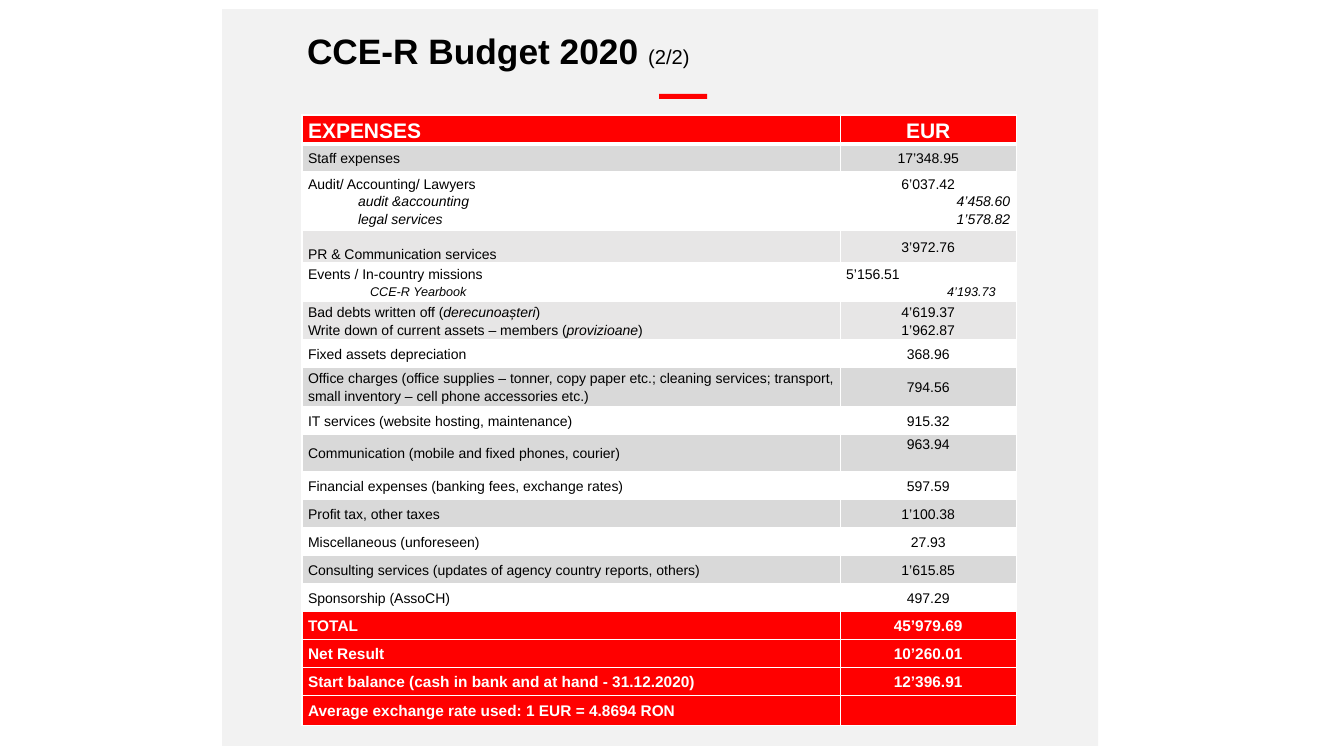
import pptx
import pptx.util
import pptx.dml.color
import pptx.enum.shapes
import pptx.enum.text
import lxml.etree

ALIGN = pptx.enum.text.PP_ALIGN
ANCHOR = pptx.enum.text.MSO_ANCHOR
RED, WHITE, BLACK = "FF0000", "FFFFFF", "000000"
GRAY, PALE = "D9D9D9", "E7E6E6"


def px(n):
    return pptx.util.Emu(round(n * 914400 / 100.8))


def add_text(p, text, size=10, color=BLACK, bold=False, align=ALIGN.LEFT, spacing=1.15, indent=0):
    p.alignment = align
    p.line_spacing = spacing
    if indent:
        p._p.get_or_add_pPr().set("marL", str(px(indent)))
    for i, part in enumerate(text.split("*")):
        if part or not text:
            r = p.add_run()
            r.text = part
            r.font.name = "Arial"
            r.font.size = pptx.util.Pt(size)
            r.font.bold = bold
            r.font.italic = i % 2 == 1
            r.font.color.rgb = pptx.dml.color.RGBColor.from_string(color)


prs = pptx.Presentation()
prs.slide_width = pptx.util.Inches(13.33)
prs.slide_height = pptx.util.Inches(7.5)
s = prs.slides.add_slide(prs.slide_layouts[6])

for box, color in [((222, 9, 876, 737), "F2F2F2"), ((659, 94, 48, 5), RED)]:
    sp = s.shapes.add_shape(pptx.enum.shapes.MSO_SHAPE.RECTANGLE, *map(px, box))
    sp.shadow.inherit = False
    sp.fill.solid()
    sp.fill.fore_color.rgb = pptx.dml.color.RGBColor.from_string(color)
    sp.line.fill.background()

tf = s.shapes.add_textbox(px(297), px(30), px(680), px(46)).text_frame
tf.word_wrap = True
tf.vertical_anchor = ANCHOR.MIDDLE
add_text(tf.paragraphs[0], "CCE-R Budget 2020 ", size=25.2, bold=True, spacing=0.9)
add_text(tf.paragraphs[0], "(2/2)", size=14.4, spacing=0.9)

sub = {"indent": 50}
right = {"align": ALIGN.RIGHT}
rows = [
    (28, RED, ["EXPENSES"], ["EUR"]),
    (28, GRAY, ["Staff expenses"], ["17’348.95"]),
    (57, WHITE, ["Audit/ Accounting/ Lawyers", ("*audit &accounting*", sub), ("*legal services*", sub)],
     ["6’037.42", ("*4’458.60*", right), ("*1’578.82*", right)]),
    (33, PALE, ["PR & Communication services"], ["3’972.76"]),
    (38, WHITE, ["Events / In-country missions", ("*CCE-R Yearbook*", {"indent": 62, "size": 9})],
     [("5’156.51", {"align": ALIGN.LEFT}), ("*4’193.73*", {"align": ALIGN.LEFT, "indent": 101, "size": 9})]),
    (36, PALE, ["Bad debts written off (*derecunoașteri*)",
                "Write down of current assets – members (*provizioane*)"], ["4’619.37", "1’962.87"]),
    (28, WHITE, ["Fixed assets depreciation"], ["368.96"]),
    (36, GRAY, ["Office charges (office supplies – tonner, copy paper etc.; cleaning services; transport, "
                "small inventory – cell phone accessories etc.)"], ["794.56"]),
    (28, WHITE, ["IT services (website hosting, maintenance)"], ["915.32"]),
    (37, GRAY, ["Communication (mobile and fixed phones, courier)"], ["963.94"]),
    (28, WHITE, ["Financial expenses (banking fees, exchange rates)"], ["597.59"]),
    (28, GRAY, ["Profit tax, other taxes"], ["1’100.38"]),
    (28, WHITE, ["Miscellaneous (unforeseen)"], ["27.93"]),
    (28, GRAY, ["Consulting services (updates of agency country reports, others)"], ["1’615.85"]),
    (28, WHITE, ["Sponsorship (AssoCH)"], ["497.29"]),
    (28, RED, ["TOTAL"], ["45’979.69"]),
    (28, RED, ["Net Result"], ["10’260.01"]),
    (28, RED, ["Start balance (cash in bank and at hand - 31.12.2020)"], ["12’396.91"]),
    (28, RED, ["Average exchange rate used: 1 EUR = 4.8694 RON"], [""]),
]
anchors = {(3, 0): ANCHOR.BOTTOM, (9, 1): ANCHOR.TOP}

height = sum(row[0] for row in rows)
table = s.shapes.add_table(len(rows), 2, px(302), px(115), px(714), px(height)).table
table.columns[0].width = px(538)
table.columns[1].width = px(176)

for i, (row_height, fill, *columns) in enumerate(rows):
    table.rows[i].height = px(row_height)
    style = {"bold": fill == RED, "color": WHITE if fill == RED else BLACK}
    if fill == RED:
        style["size"] = 15 if i == 0 else 11
    for j, lines in enumerate(columns):
        cell = table.cell(i, j)
        cell.margin_left = cell.margin_right = px(6)
        cell.margin_top = cell.margin_bottom = 0
        cell.vertical_anchor = anchors.get((i, j), ANCHOR.MIDDLE)
        for side in "LRTB":
            thick = (i, side) in [(0, "B"), (1, "T")]
            ln = lxml.etree.SubElement(cell._tc.get_or_add_tcPr(), pptx.oxml.ns.qn("a:ln" + side),
                                       w=str(pptx.util.Pt(3 if thick else 1)))
            solid = lxml.etree.SubElement(ln, pptx.oxml.ns.qn("a:solidFill"))
            lxml.etree.SubElement(solid, pptx.oxml.ns.qn("a:srgbClr"), val=WHITE)
        cell.fill.solid()
        cell.fill.fore_color.rgb = pptx.dml.color.RGBColor.from_string(fill)
        tf = cell.text_frame
        for k, line in enumerate(lines):
            text, extra = (line, {}) if isinstance(line, str) else line
            p = tf.add_paragraph() if k else tf.paragraphs[0]
            add_text(p, text, **{"align": ALIGN.CENTER if j else ALIGN.LEFT, **style, **extra})

prs.save("out.pptx")
